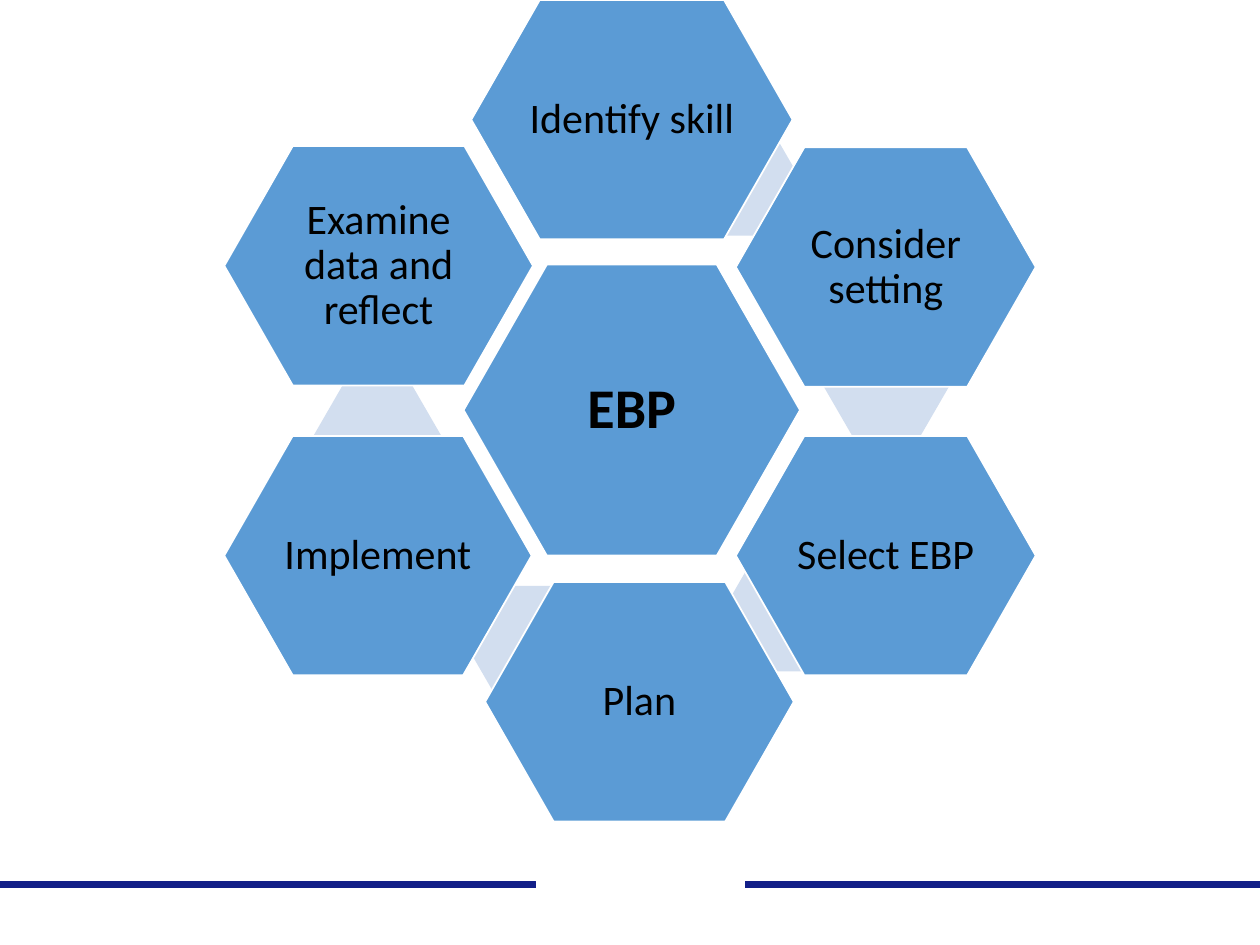
from pptx import Presentation
from pptx.dml.color import RGBColor
from pptx.enum.shapes import MSO_CONNECTOR, MSO_SHAPE
from pptx.enum.text import MSO_ANCHOR, PP_ALIGN
from pptx.oxml.ns import qn
from pptx.util import Inches, Pt
from lxml import etree

BLUE = RGBColor(0x5B, 0x9B, 0xD5)
PALE = RGBColor(0xD2, 0xDE, 0xEF)
NAVY = RGBColor(0x12, 0x1F, 0x88)
WHITE = RGBColor(0xFF, 0xFF, 0xFF)
BLACK = RGBColor(0x00, 0x00, 0x00)

LINK_SIZE = (1.01, 0.87)
STEP_HEIGHT = 1.9
STEPS = [
    ("Identify skill", (3.74, 0), 2.55, (5.35, 1)),
    ("Consider setting", (5.84, 1.17), 2.38, (6.53, 2.62)),
    ("Select EBP", (5.84, 3.46), 2.38, (5.71, 4.46)),
    ("Plan", (3.85, 4.62), 2.45, (3.68, 4.65)),
    ("Implement", (1.78, 3.46), 2.44, (2.49, 3.02)),
    ("Examine data and reflect", (1.78, 1.16), 2.45, None),
]


def add_hexagon(slide, box, fill, adj):
    s = slide.shapes.add_shape(MSO_SHAPE.HEXAGON, *map(Inches, box))
    s.shadow.inherit = False
    s.adjustments[0] = adj
    s.fill.solid()
    s.fill.fore_color.rgb = fill
    s.line.fill.background()
    return s


def add_cell(slide, box, text, inset, font):
    s = add_hexagon(slide, box, BLUE, 0.286)
    s.line.color.rgb = WHITE
    s.line.width = Pt(1)
    tf = s.text_frame
    tf.word_wrap = True
    tf.vertical_anchor = MSO_ANCHOR.MIDDLE
    for side in ("left", "top", "right", "bottom"):
        setattr(tf, f"margin_{side}", Inches(inset))
    p = tf.paragraphs[0]
    p.alignment = PP_ALIGN.CENTER
    p.line_spacing = 0.9
    r = p.add_run()
    r.text = text
    r.font.color.rgb = BLACK
    for name, value in {"name": "Calibri", **font}.items():
        setattr(r.font, name, value)


def add_cycle(slide, left, top):
    add_cell(slide, (left + 1.9, top + 2.1, 2.67, 2.31), "EBP", 0.04,
             {"size": Pt(32), "bold": True})
    for text, (x, y), width, link in STEPS:
        if link:
            link_x, link_y = link
            link_box = (left + link_x - 1.78, top + link_y, *LINK_SIZE)
            add_hexagon(slide, link_box, PALE, 0.289)
        add_cell(slide, (left + x - 1.78, top + y, width, STEP_HEIGHT), text, 0.03,
                 {"size": Pt(24)})


def add_rule(slide, left, right, y, color):
    c = slide.shapes.add_connector(
        MSO_CONNECTOR.STRAIGHT, *map(Inches, (left, y, right, y)))
    c.line.color.rgb = color
    c.line.width = Pt(4.5)
    etree.SubElement(c.element.spPr, qn("a:effectLst"))


def add_footer(slide, left, right, y):
    add_rule(slide, left, right, y, NAVY)
    add_rule(slide, left + 4.25, left + 5.91, y, WHITE)


def main():
    prs = Presentation()
    prs.slide_width, prs.slide_height = Inches(10), Inches(7.5)
    slide = prs.slides.add_slide(prs.slide_layouts[6])
    add_footer(slide, 0, 10, 7.02)
    add_cycle(slide, 1.78, 0)
    prs.save("out.pptx")


if __name__ == "__main__":
    main()
